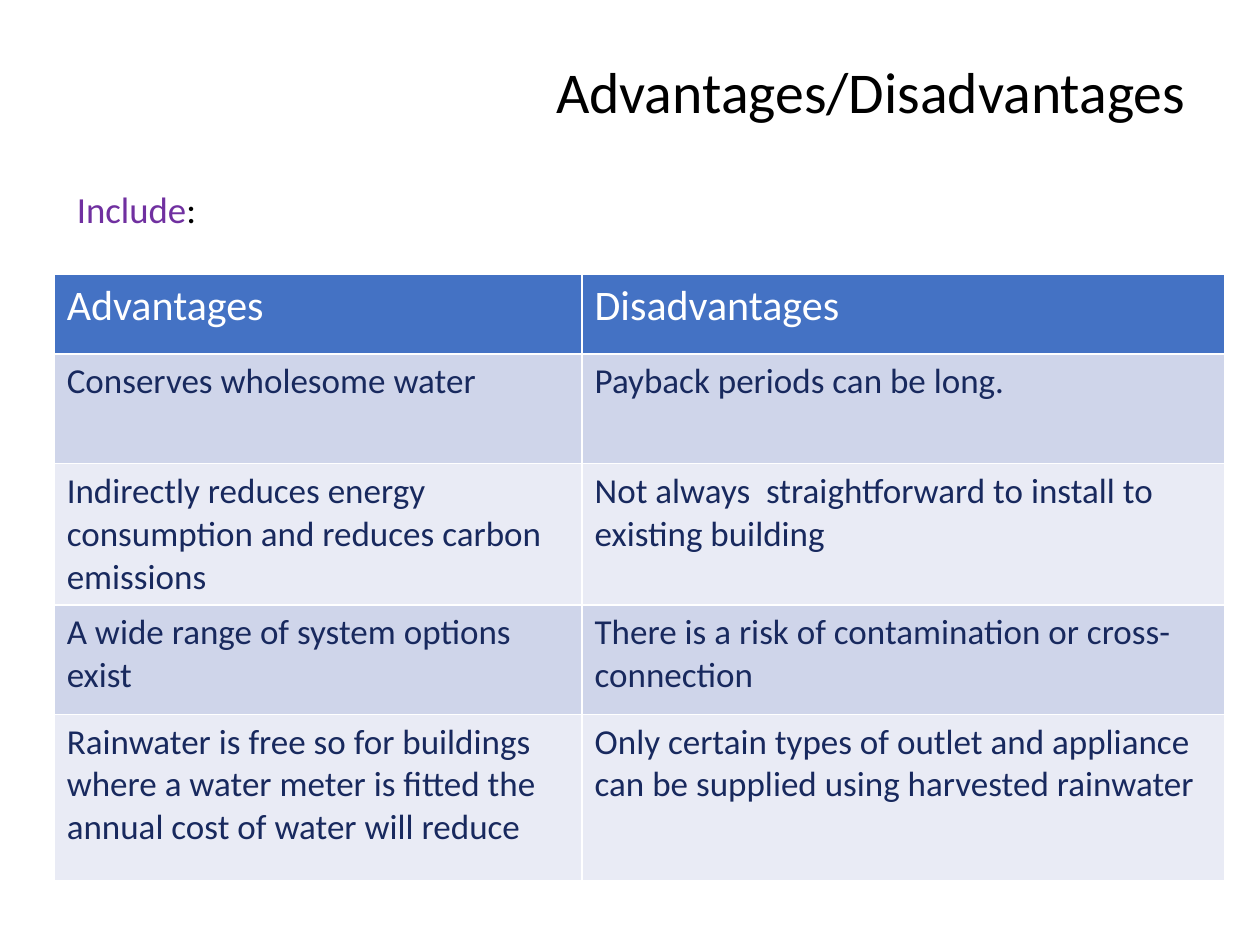
from lxml.etree import SubElement
from pptx import Presentation
from pptx.dml.color import RGBColor
from pptx.enum.text import MSO_ANCHOR, PP_ALIGN
from pptx.oxml.ns import qn
from pptx.util import Inches, Pt

FONT = "Calibri"
COLORS = {
    "black": "000000",
    "white": "FFFFFF",
    "purple": "7030A0",
    "header": "4472C4",
    "odd_row": "CFD5EA",
    "even_row": "E9EBF5",
    "cell_text": "18295E",
}
COLUMN_WIDTHS = [4.19, 5.1]
ROW_HEIGHTS = [0.63, 0.87, 0.87, 0.87, 1.32]
ROWS = [
    ("Advantages", "Disadvantages"),
    ("Conserves wholesome water", "Payback periods can be long."),
    ("Indirectly reduces energy consumption and reduces carbon emissions",
     "Not always  straightforward to install to  existing building"),
    ("A wide range of system options exist",
     "There is a risk of contamination or cross-connection"),
    ("Rainwater is free so for buildings where a water meter is fitted "
     "the annual cost of water will reduce",
     "Only certain types of outlet and appliance can be supplied "
     "using harvested rainwater"),
]


def add_run(para, text, size, color):
    span = para.add_run()
    span.text = text
    span.font.name = FONT
    span.font.size = Pt(size)
    span.font.bold = False
    span.font.color.rgb = RGBColor.from_string(COLORS[color])


def place(box, left, top, width, height):
    box.left, box.top = Inches(left), Inches(top)
    box.width, box.height = Inches(width), Inches(height)


def fill_title(box):
    place(box, 2.48, 0.21, 7.03, 1.08)
    box.text_frame.vertical_anchor = MSO_ANCHOR.MIDDLE
    para = box.text_frame.paragraphs[0]
    para.alignment = PP_ALIGN.RIGHT
    para.line_spacing = 0.9
    add_run(para, "Advantages/Disadvantages", 33, "black")


def fill_body(box):
    place(box, 0.51, 1.47, 9, 4.95)
    para = box.text_frame.paragraphs[0]
    properties = para._p.get_or_add_pPr()
    properties.set("marL", "0")
    properties.set("indent", "0")
    SubElement(properties, qn("a:buNone"))
    para.line_spacing = 0.9
    para.space_before = Pt(0)
    add_run(para, "Include", 21, "purple")
    add_run(para, ":", 21, "black")


def add_borders(cell):
    """Draw a thin white line on each side; call before filling the cell."""
    properties = cell._tc.get_or_add_tcPr()
    for side in ("lnL", "lnR", "lnT", "lnB"):
        line = SubElement(properties, qn(f"a:{side}"), w=str(Pt(1)))
        fill = SubElement(line, qn("a:solidFill"))
        SubElement(fill, qn("a:srgbClr"), val=COLORS["white"])


def fill_cell(cell, text, size, text_color, fill_color):
    add_borders(cell)
    cell.fill.solid()
    cell.fill.fore_color.rgb = RGBColor.from_string(COLORS[fill_color])
    add_run(cell.text_frame.paragraphs[0], text, size, text_color)


def add_comparison_table(page):
    frame = page.shapes.add_table(
        len(ROWS), len(COLUMN_WIDTHS), Inches(0.43), Inches(2.18),
        Inches(sum(COLUMN_WIDTHS)), Inches(sum(ROW_HEIGHTS)))
    table = frame.table
    for column, width in zip(table.columns, COLUMN_WIDTHS):
        column.width = Inches(width)
    for index, (row, height, texts) in enumerate(
            zip(table.rows, ROW_HEIGHTS, ROWS)):
        row.height = Inches(height)
        if index == 0:
            style = (24, "white", "header")
        else:
            style = (20, "cell_text", "odd_row" if index % 2 else "even_row")
        for cell, text in zip(row.cells, texts):
            fill_cell(cell, text, *style)


def main():
    deck = Presentation()
    deck.slide_width, deck.slide_height = Inches(10), Inches(7.5)
    page = deck.slides.add_slide(deck.slide_layouts[1])
    fill_title(page.shapes.title)
    fill_body(page.placeholders[1])
    add_comparison_table(page)
    deck.save("out.pptx")


if __name__ == "__main__":
    main()
